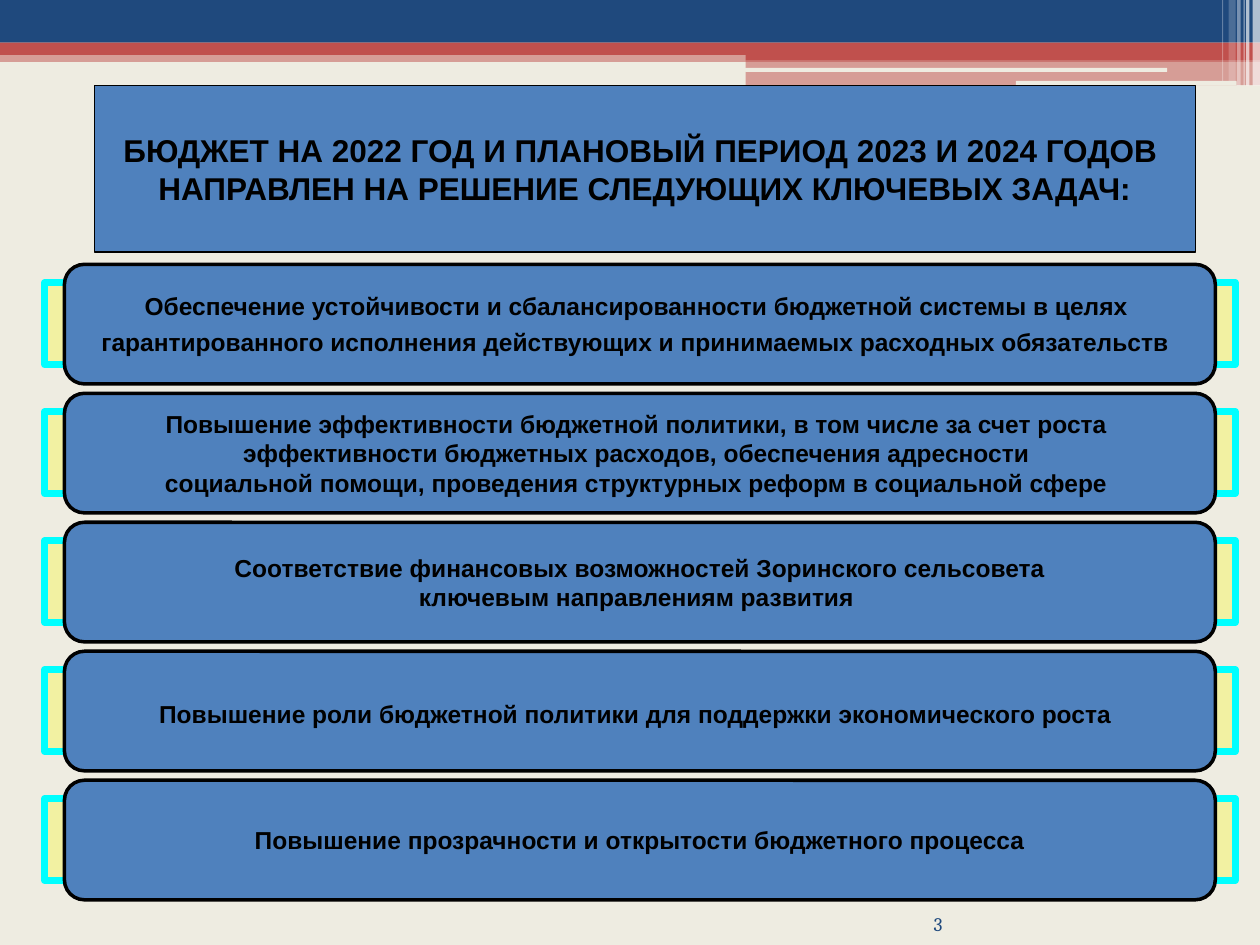
from lxml import etree
from pptx import Presentation
from pptx.dml.color import RGBColor
from pptx.enum.shapes import MSO_SHAPE
from pptx.enum.text import MSO_ANCHOR, PP_ALIGN
from pptx.oxml.ns import qn
from pptx.util import Cm, Pt

RECT = MSO_SHAPE.RECTANGLE
ROUNDED = MSO_SHAPE.ROUNDED_RECTANGLE
MIDDLE = MSO_ANCHOR.MIDDLE
BOTTOM = MSO_ANCHOR.BOTTOM
CENTER = PP_ALIGN.CENTER
RIGHT = PP_ALIGN.RIGHT

CREAM = RGBColor(0xEE, 0xEC, 0xE1)
NAVY = RGBColor(0x1F, 0x49, 0x7D)
RED = RGBColor(0xC0, 0x50, 0x4D)
BLUE = RGBColor(0x4F, 0x81, 0xBD)
YELLOW = RGBColor(0xFF, 0xFF, 0x00)
CYAN = RGBColor(0x00, 0xFF, 0xFF)
WHITE = RGBColor(0xFF, 0xFF, 0xFF)
BLACK = RGBColor(0x00, 0x00, 0x00)


def add_block(shapes, preset, box, color, opacity=100, outline=None, weight=0):
    block = shapes.add_shape(preset, *[Cm(length) for length in box])
    block.shadow.inherit = False
    block.fill.solid()
    block.fill.fore_color.rgb = color
    if opacity < 100:
        srgb = block.fill._xPr.find(".//" + qn("a:srgbClr"))
        etree.SubElement(srgb, qn("a:alpha"), val=str(opacity * 1000))
    if outline is None:
        block.line.fill.background()
    else:
        block.line.color.rgb = outline
        block.line.width = Pt(weight)
    return block


def write_lines(block, lines, size):
    frame = block.text_frame
    frame.word_wrap = False
    frame.vertical_anchor = MIDDLE
    frame.text = "\n".join(lines)
    for paragraph in frame.paragraphs:
        paragraph.alignment = CENTER
        for run in paragraph.runs:
            run.font.name = "Arial"
            run.font.size = Pt(size)
            run.font.bold = True
            run.font.color.rgb = BLACK


prs = Presentation()
prs.slide_width = Cm(25.4)
prs.slide_height = Cm(19.05)
slide = prs.slides.add_slide(prs.slide_layouts[6])
slide.background.fill.solid()
slide.background.fill.fore_color.rgb = CREAM

header_bands = [
    (RECT, (0, 1.02, 25.4, 0.23), RED, 50),
    (RECT, (0, 0, 25.4, 0.86), NAVY, 100),
    (RECT, (0, 0.86, 25.4, 0.25), RED, 100),
    (RECT, (15.03, 0.99, 10.37, 0.23), RED, 100),
    (RECT, (15.03, 1.22, 10.37, 0.5), RED, 50),
    (ROUNDED, (15.02, 1.37, 8.51, 0.08), CREAM, 100),
    (ROUNDED, (20.48, 1.63, 4.45, 0.09), CREAM, 100),
]
for preset, box, color, opacity in header_bands:
    add_block(slide.shapes, preset, box, color, opacity)

header_stripes = [
    (25.25, 0.15, 1.73, 65),
    (25.12, 0.07, 1.73, 65),
    (25.07, 0.02, 1.73, 60),
    (24.94, 0.07, 1.73, 40),
    (24.77, 0.14, 1.63, 20),
    (24.64, 0.02, 1.63, 30),
]
for left, width, height, opacity in header_stripes:
    add_block(slide.shapes, RECT, (left, 0, width, height), WHITE, opacity)

page_number = slide.shapes.add_textbox(Cm(17.37), Cm(18.21), Cm(1.63), Cm(0.64))
frame = page_number.text_frame
frame.word_wrap = True
frame.margin_left = frame.margin_right = frame.margin_top = frame.margin_bottom = 0
frame.vertical_anchor = BOTTOM
frame.text = "3"
frame.paragraphs[0].alignment = RIGHT
digit = frame.paragraphs[0].runs[0]
digit.font.name = "Cambria"
digit.font.size = Pt(11)
digit.font.color.rgb = NAVY

heading = add_block(slide.shapes, RECT, (1.9, 1.73, 22.2, 3.35), BLUE, 100, BLACK, 0.75)
write_lines(heading, [
    "БЮДЖЕТ НА 2022 ГОД И ПЛАНОВЫЙ ПЕРИОД 2023 И 2024 ГОДОВ ",
    "НАПРАВЛЕН НА РЕШЕНИЕ СЛЕДУЮЩИХ КЛЮЧЕВЫХ ЗАДАЧ:",
], 18)

tasks = [
    (["Обеспечение устойчивости и сбалансированности бюджетной системы в целях ",
      "гарантированного исполнения действующих и принимаемых расходных обязательств"], True),
    (["Повышение эффективности бюджетной политики, в том числе за счет роста ",
      "эффективности бюджетных расходов, обеспечения адресности ",
      "социальной помощи, проведения структурных реформ в социальной сфере "], False),
    (["Соответствие финансовых возможностей Зоринского сельсовета",
      "ключевым направлениям развития "], False),
    (["Повышение роли бюджетной политики для поддержки экономического роста"], True),
    (["Повышение прозрачности и открытости бюджетного процесса"], False),
]
FIRST_TOP, PITCH = 5.33, 2.6
for index, (lines, large_ending) in enumerate(tasks):
    top = FIRST_TOP + index * PITCH
    task = slide.shapes.add_group_shape()
    add_block(task.shapes, RECT, (0.9, top + 0.37, 24, 1.65), YELLOW, 28, CYAN, 4)
    card = add_block(task.shapes, ROUNDED, (1.3, top, 23.2, 2.41), BLUE, 100, BLACK, 2)
    write_lines(card, lines, 14)
    if large_ending:
        ending = card.text_frame.paragraphs[-1].add_run()
        ending.text = " "
        ending.font.name = "Arial"
        ending.font.size = Pt(18)

prs.save("out.pptx")
